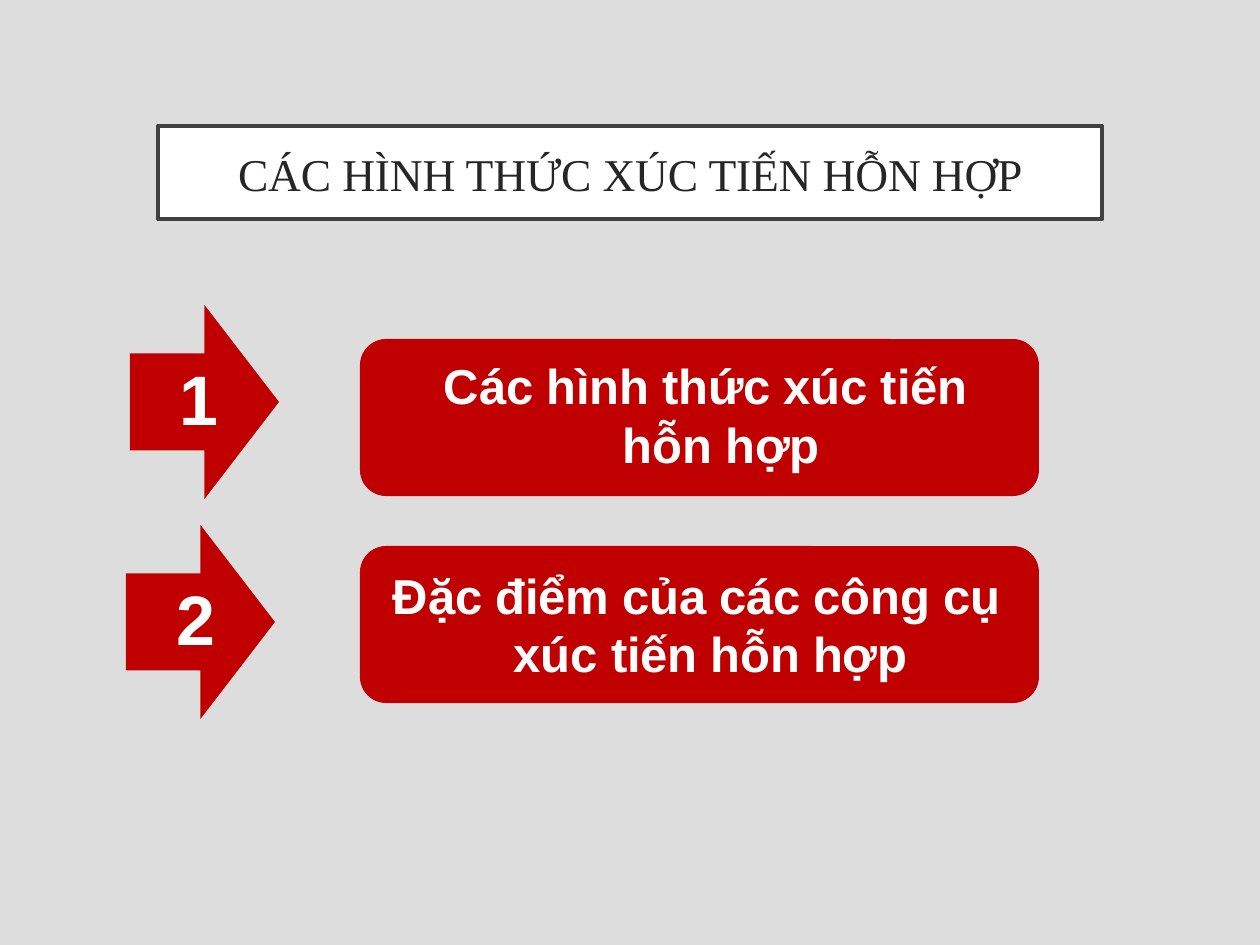
from pptx import Presentation
from pptx.dml.color import RGBColor
from pptx.enum.shapes import MSO_SHAPE
from pptx.enum.text import MSO_ANCHOR, MSO_AUTO_SIZE, PP_ALIGN
from pptx.util import Pt

ARROW = MSO_SHAPE.RIGHT_ARROW
ROUNDED = MSO_SHAPE.ROUNDED_RECTANGLE
LEFT, CENTER = PP_ALIGN.LEFT, PP_ALIGN.CENTER
TOP, MIDDLE = MSO_ANCHOR.TOP, MSO_ANCHOR.MIDDLE
GROW = MSO_AUTO_SIZE.SHAPE_TO_FIT_TEXT

GREY = RGBColor(0xDD, 0xDD, 0xDD)
WHITE = RGBColor(0xFF, 0xFF, 0xFF)
RED = RGBColor(0xC0, 0x00, 0x00)
BORDER = RGBColor(0x40, 0x40, 0x40)
INK = RGBColor(0x26, 0x26, 0x26)

TITLE_ONLY = 5
EMU_PER_PX = 914400 / 126


def px(length):
    return round(length * EMU_PER_PX)


class SlideBuilder:
    body_font = "Arial"
    title_font = "Times New Roman"

    def __init__(self, slide):
        self.slide = slide
        slide.background.fill.solid()
        slide.background.fill.fore_color.rgb = GREY

    def set_text(self, shape, text, font, size, color, bold=False, align=LEFT,
                 anchor=TOP, margin=1, indent=0):
        frame = shape.text_frame
        frame.text = text
        frame.word_wrap = True
        frame.auto_size = GROW
        frame.vertical_anchor = anchor
        frame.margin_left = frame.margin_right = frame.margin_bottom = 0
        frame.margin_top = px(1)
        paragraph = frame.paragraphs[0]
        paragraph.alignment = align
        paragraph.space_before = Pt(0.9)
        # Hanging indent and letter spacing
        properties = paragraph._p.get_or_add_pPr()
        properties.set("marL", str(px(margin)))
        properties.set("indent", str(px(indent)))
        run = paragraph.runs[0]
        run._r.get_or_add_rPr().set("spc", "-10")
        run.font.name = font
        run.font.size = Pt(size)
        run.font.bold = bold
        run.font.color.rgb = color

    def title(self, text, left, top, width, height):
        shape = self.slide.shapes.title
        shape.left, shape.top = px(left), px(top)
        shape.width, shape.height = px(width), px(height)
        shape.fill.solid()
        shape.fill.fore_color.rgb = WHITE
        shape.line.color.rgb = BORDER
        shape.line.width = Pt(2.5)
        self.set_text(shape, text, self.title_font, 26, INK,
                      align=CENTER, anchor=MIDDLE)

    def block(self, kind, left, top, width, height):
        shape = self.slide.shapes.add_shape(
            kind, px(left), px(top), px(width), px(height))
        shape.shadow.inherit = False
        shape.fill.solid()
        shape.fill.fore_color.rgb = RED
        shape.line.fill.background()

    def label(self, text, left, top, width, height, size, margin=1, indent=0):
        box = self.slide.shapes.add_textbox(
            px(left), px(top), px(width), px(height))
        self.set_text(box, text, self.body_font, size, WHITE, bold=True,
                      margin=margin, indent=indent)

    def numbered_arrow(self, number, left, top):
        self.block(ARROW, left, top, 149, 194)
        self.label(str(number), left + 49, top + 50, 43, 87, 40)


def main():
    presentation = Presentation()
    presentation.slide_width, presentation.slide_height = px(1260), px(945)
    layout = presentation.slide_layouts[TITLE_ONLY]
    builder = SlideBuilder(presentation.slides.add_slide(layout))

    builder.title("CÁC HÌNH THỨC XÚC TIẾN HỖN HỢP", 158, 144, 944, 57)

    # Numbered arrows
    for number, (left, top) in enumerate([(130, 305), (126, 525)], start=1):
        builder.numbered_arrow(number, left, top)

    # Topic bars: bar top, then text, its box and its hanging indent
    topics = [
        (339, "Các hình thức xúc tiến hỗn hợp", 442, 355, 532, 181),
        (546, "Đặc điểm của các công cụ xúc tiến hỗn hợp", 391, 564, 616, 123),
    ]
    for bar_top, text, left, top, width, margin in topics:
        builder.block(ROUNDED, 360, bar_top, 679, 157)
        builder.label(text, left, top, width, 121, 28, margin, 2 - margin)

    presentation.save("out.pptx")


if __name__ == "__main__":
    main()
